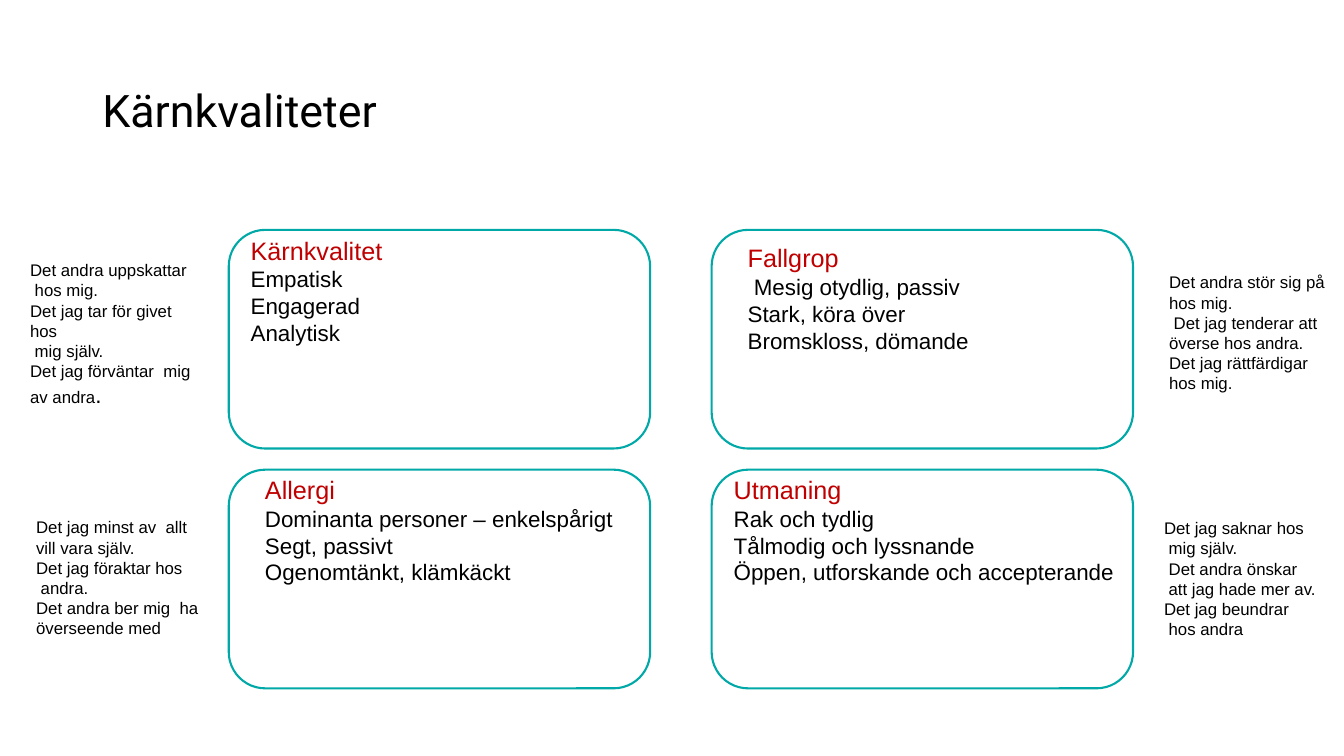
from dataclasses import dataclass

import pptx
import pptx.dml.color
import pptx.enum.shapes
import pptx.enum.text
import pptx.util

Pt = pptx.util.Pt
RGBColor = pptx.dml.color.RGBColor


@dataclass(frozen=True)
class Theme:
    black: RGBColor = RGBColor(0x00, 0x00, 0x00)
    white: RGBColor = RGBColor(0xFF, 0xFF, 0xFF)
    red: RGBColor = RGBColor(0xC0, 0x00, 0x00)
    teal: RGBColor = RGBColor(0x00, 0xA9, 0xA7)
    title_font: str = "Roboto"
    body_font: str = "Arial"
    title_size: float = 32
    heading_size: float = 18
    body_size: float = 16
    note_size: float = 12
    outline_width: float = 1.5


@dataclass(frozen=True)
class Box:
    left: float
    top: float
    width: float
    height: float


@dataclass(frozen=True)
class Quadrant:
    column: int
    row: int
    heading: str
    qualities: tuple[str, ...]
    text_box: Box
    notes: tuple[str, ...]
    note_box: Box
    note_ending: str = ""


THEME = Theme()
CARD_LEFT, CARD_TOP = 163.4, 164.2
CARD_WIDTH, CARD_HEIGHT = 301, 156.2
COLUMN_STEP, ROW_STEP = 344.9, 171.3

QUADRANTS = (
    Quadrant(
        0, 0, "Kärnkvalitet", ("Empatisk", "Engagerad", "Analytisk"),
        Box(172, 164.2, 244, 134),
        ("Det andra uppskattar", " hos mig.", "Det jag tar för givet hos",
         " mig själv.", "Det jag förväntar  mig", "av andra"),
        Box(14.4, 182.2, 137, 88.6), note_ending=".",
    ),
    Quadrant(
        1, 0, "Fallgrop",
        (" Mesig otydlig, passiv", "Stark, köra över", "Bromskloss, dömande"),
        Box(527, 169.9, 173, 81),
        ("Det andra stör sig på", "hos mig.", " Det jag tenderar att",
         "överse hos andra.", "Det jag rättfärdigar", "hos mig."),
        Box(828, 190.8, 126, 90),
    ),
    Quadrant(
        0, 1, "Allergi",
        ("Dominanta personer – enkelspårigt", "Segt, passivt", "Ogenomtänkt, klämkäckt"),
        Box(182.2, 335.5, 263, 81),
        ("Det jag minst av  allt", "vill vara själv.", "Det jag föraktar hos",
         " andra.", "Det andra ber mig  ha", "överseende med"),
        Box(18.7, 365.8, 131, 90),
    ),
    Quadrant(
        1, 1, "Utmaning",
        ("Rak och tydlig", "Tålmodig och lyssnande", "Öppen, utforskande och accepterande"),
        Box(517, 335.5, 286, 81),
        ("Det jag saknar hos", " mig själv.", " Det andra önskar",
         " att jag hade mer av.", "Det jag beundrar", " hos andra"),
        Box(824.4, 366.5, 124, 90),
    ),
)


def add_text_box(slide: pptx.slide.Slide, box: Box, wrap: bool = False):
    shape = slide.shapes.add_textbox(Pt(box.left), Pt(box.top), Pt(box.width), Pt(box.height))
    shape.text_frame.word_wrap = wrap
    return shape.text_frame


def add_run(paragraph, text: str, *, size: float, color: RGBColor = THEME.black,
            font: str = THEME.body_font) -> None:
    run = paragraph.add_run()
    run.text = text
    run.font.size = Pt(size)
    run.font.name = font
    run.font.color.rgb = color


def add_lines(text_frame, lines: tuple[str, ...], **text_format) -> None:
    """Write one paragraph per line, starting with the frame's first unused one."""
    for line in lines:
        paragraph = text_frame.paragraphs[-1]
        if paragraph.runs:
            paragraph = text_frame.add_paragraph()
        add_run(paragraph, line, **text_format)


def add_title(slide: pptx.slide.Slide) -> None:
    text_frame = add_text_box(slide, Box(66, 28.8, 828, 104.4), wrap=True)
    text_frame.vertical_anchor = pptx.enum.text.MSO_ANCHOR.MIDDLE
    add_lines(text_frame, ("Kärnkvaliteter",), size=THEME.title_size, font=THEME.title_font)
    text_frame.paragraphs[0].line_spacing = 0.9


def add_card(slide: pptx.slide.Slide, quadrant: Quadrant) -> None:
    card = slide.shapes.add_shape(
        pptx.enum.shapes.MSO_SHAPE.ROUNDED_RECTANGLE,
        Pt(CARD_LEFT + quadrant.column * COLUMN_STEP),
        Pt(CARD_TOP + quadrant.row * ROW_STEP),
        Pt(CARD_WIDTH), Pt(CARD_HEIGHT),
    )
    card.shadow.inherit = False
    card.fill.solid()
    card.fill.fore_color.rgb = THEME.white
    card.line.color.rgb = THEME.teal
    card.line.width = Pt(THEME.outline_width)


def add_quadrant(slide: pptx.slide.Slide, quadrant: Quadrant) -> None:
    add_card(slide, quadrant)
    text_frame = add_text_box(slide, quadrant.text_box)
    add_lines(text_frame, (quadrant.heading,), size=THEME.heading_size, color=THEME.red)
    add_lines(text_frame, quadrant.qualities, size=THEME.body_size)

    note_frame = add_text_box(slide, quadrant.note_box)
    add_lines(note_frame, quadrant.notes, size=THEME.note_size)
    if quadrant.note_ending:
        add_run(note_frame.paragraphs[-1], quadrant.note_ending, size=THEME.body_size)


def main() -> None:
    presentation = pptx.Presentation()
    presentation.slide_width = Pt(960)
    presentation.slide_height = Pt(540)
    slide = presentation.slides.add_slide(presentation.slide_layouts[6])
    add_title(slide)
    for quadrant in QUADRANTS:
        add_quadrant(slide, quadrant)
    presentation.save("out.pptx")


if __name__ == "__main__":
    main()
